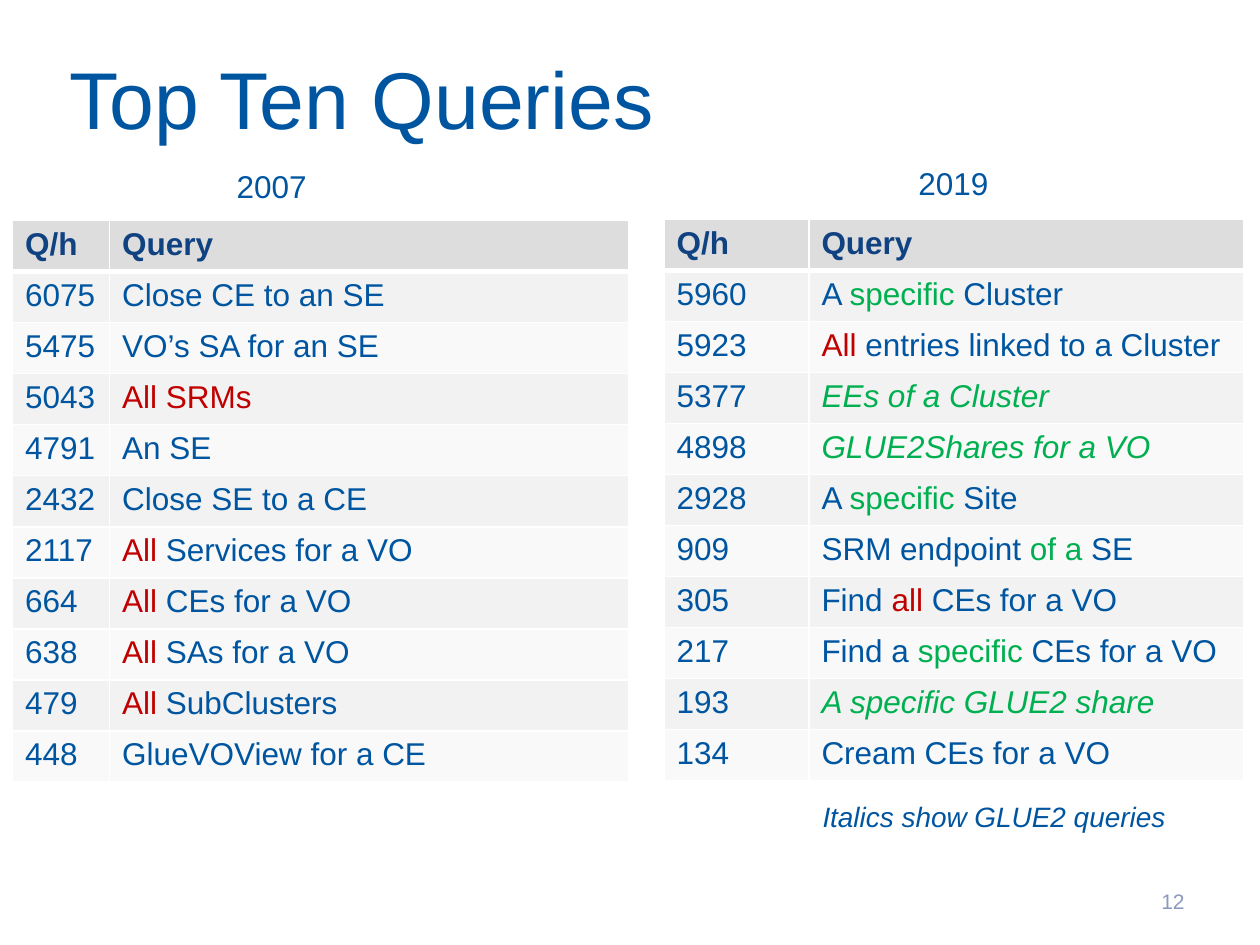
import pptx
import pptx.util
import pptx.dml.color
import pptx.enum.text
import pptx.oxml.ns
import lxml.etree

Inches = pptx.util.Inches
Pt = pptx.util.Pt
ALIGN = pptx.enum.text.PP_ALIGN
ANCHOR = pptx.enum.text.MSO_ANCHOR

COLORS = {
    "blue": "0055A0", "heading": "104282", "broad": "C00000",
    "narrow": "00B050", "glue2": "00B050", "number": "8C99BE",
    "head_fill": "DDDDDD", "odd_fill": "F2F2F2", "even_fill": "F9F9F9",
    "rule": "FFFFFF",
}
FONT = "Arial"
HEADINGS = ("Q/h", "Query")
ROW_HEIGHT = 4.46 / 11

QUERIES_2007 = [
    ("6075", [("Close CE to an SE", "blue")]),
    ("5475", [("VO’s SA for an SE", "blue")]),
    ("5043", [("All SRMs", "broad")]),
    ("4791", [("An SE", "blue")]),
    ("2432", [("Close SE to a CE", "blue")]),
    ("2117", [("All", "broad"), (" Services for a VO", "blue")]),
    ("664", [("All", "broad"), (" CEs for a VO", "blue")]),
    ("638", [("All", "broad"), (" SAs for a VO", "blue")]),
    ("479", [("All ", "broad"), ("SubClusters", "blue")]),
    ("448", [("GlueVOView for a CE", "blue")]),
]
QUERIES_2019 = [
    ("5960", [("A ", "blue"), ("specific", "narrow"), (" Cluster", "blue")]),
    ("5923", [("All", "broad"), (" entries linked to a Cluster", "blue")]),
    ("5377", [("EEs of a Cluster", "glue2")]),
    ("4898", [("GLUE2Shares for a VO", "glue2")]),
    ("2928", [("A ", "blue"), ("specific", "narrow"), (" Site", "blue")]),
    ("909", [("SRM endpoint ", "blue"), ("of a", "narrow"), (" SE", "blue")]),
    ("305", [("Find ", "blue"), ("all", "broad"), (" CEs for a VO", "blue")]),
    ("217", [("Find a ", "blue"), ("specific", "narrow"), (" CEs for a VO", "blue")]),
    ("193", [("A specific GLUE2 share", "glue2")]),
    ("134", [("Cream CEs for a VO", "blue")]),
]
RANKINGS = [
    {"queries": QUERIES_2007, "left": 0.1, "top": 1.75, "columns": (0.77, 4.12)},
    {"queries": QUERIES_2019, "left": 5.27, "top": 1.74, "columns": (1.15, 3.45)},
]
LABELS = [
    {"text": "Top Ten Queries", "box": (0.5, 0.26, 9, 1.03), "size": 46,
     "anchor": ANCHOR.MIDDLE, "inset": 0.05, "wrap": True},
    {"text": "2007", "box": (1.78, 1.28, 0.76, 0.4), "size": 18},
    {"text": "2019", "box": (7.19, 1.25, 0.76, 0.4), "size": 18},
    {"text": "Italics show GLUE2 queries", "box": (6.43, 6.3, 3.03, 0.37),
     "size": 16, "italic": True},
    {"text": "12", "box": (8.95, 6.95, 0.55, 0.4), "size": 12, "color": "number",
     "anchor": ANCHOR.MIDDLE, "align": ALIGN.RIGHT, "wrap": True},
]


def rgb(name):
    return pptx.dml.color.RGBColor.from_string(COLORS[name])


def style(font, size, color, bold=False, italic=False):
    font.name = FONT
    font.size = Pt(size)
    font.bold = bold
    font.italic = italic
    font.color.rgb = rgb(color)


def add_label(slide, label):
    frame = slide.shapes.add_textbox(*map(Inches, label["box"])).text_frame
    frame.word_wrap = label.get("wrap", False)
    frame.vertical_anchor = label.get("anchor", ANCHOR.TOP)
    if "inset" in label:
        frame.margin_left = frame.margin_right = Inches(label["inset"])
    line = frame.paragraphs[0]
    line.text = label["text"]
    line.alignment = label.get("align", ALIGN.LEFT)
    style(line.font, label["size"], label.get("color", "blue"),
          italic=label.get("italic", False))


def add_border(cell, side, width):
    qn = pptx.oxml.ns.qn
    properties = cell._tc.get_or_add_tcPr()
    border = lxml.etree.SubElement(properties, qn("a:ln" + side), w=str(Pt(width)))
    fill = lxml.etree.SubElement(border, qn("a:solidFill"))
    lxml.etree.SubElement(fill, qn("a:srgbClr"), val=COLORS["rule"])


def fill_cell(cell, parts, row):
    for side in "LRTB":
        below_heading = (row, side) in ((0, "B"), (1, "T"))
        add_border(cell, side, 3 if below_heading else 1)
    band = "odd_fill" if row % 2 else "even_fill"
    cell.fill.solid()
    cell.fill.fore_color.rgb = rgb("head_fill" if row == 0 else band)
    line = cell.text_frame.paragraphs[0]
    kinds = [kind for _, kind in parts]
    base = kinds[0] if len(kinds) == 1 else "blue"
    style(line.font, 18, base, bold=row == 0, italic=base == "glue2")
    for text, kind in parts:
        run = line.add_run()
        run.text = text
        if kind != base:
            run.font.color.rgb = rgb(kind)


def add_ranking(slide, ranking):
    rows = [(HEADINGS[0], [(HEADINGS[1], "heading")])] + ranking["queries"]
    columns = ranking["columns"]
    table = slide.shapes.add_table(
        len(rows), len(columns), Inches(ranking["left"]), Inches(ranking["top"]),
        Inches(sum(columns)), Inches(ROW_HEIGHT * len(rows))).table
    table.horz_banding = False
    for column, width in zip(table.columns, columns):
        column.width = Inches(width)
    for index, (rate, query) in enumerate(rows):
        table.rows[index].height = Inches(ROW_HEIGHT)
        rate_color = "blue" if index else "heading"
        fill_cell(table.cell(index, 0), [(rate, rate_color)], index)
        fill_cell(table.cell(index, 1), query, index)


def main():
    deck = pptx.Presentation()
    deck.slide_width, deck.slide_height = Inches(10), Inches(7.5)
    slide = deck.slides.add_slide(deck.slide_layouts[6])
    for ranking in RANKINGS:
        add_ranking(slide, ranking)
    for label in LABELS:
        add_label(slide, label)
    deck.save("out.pptx")


if __name__ == "__main__":
    main()
